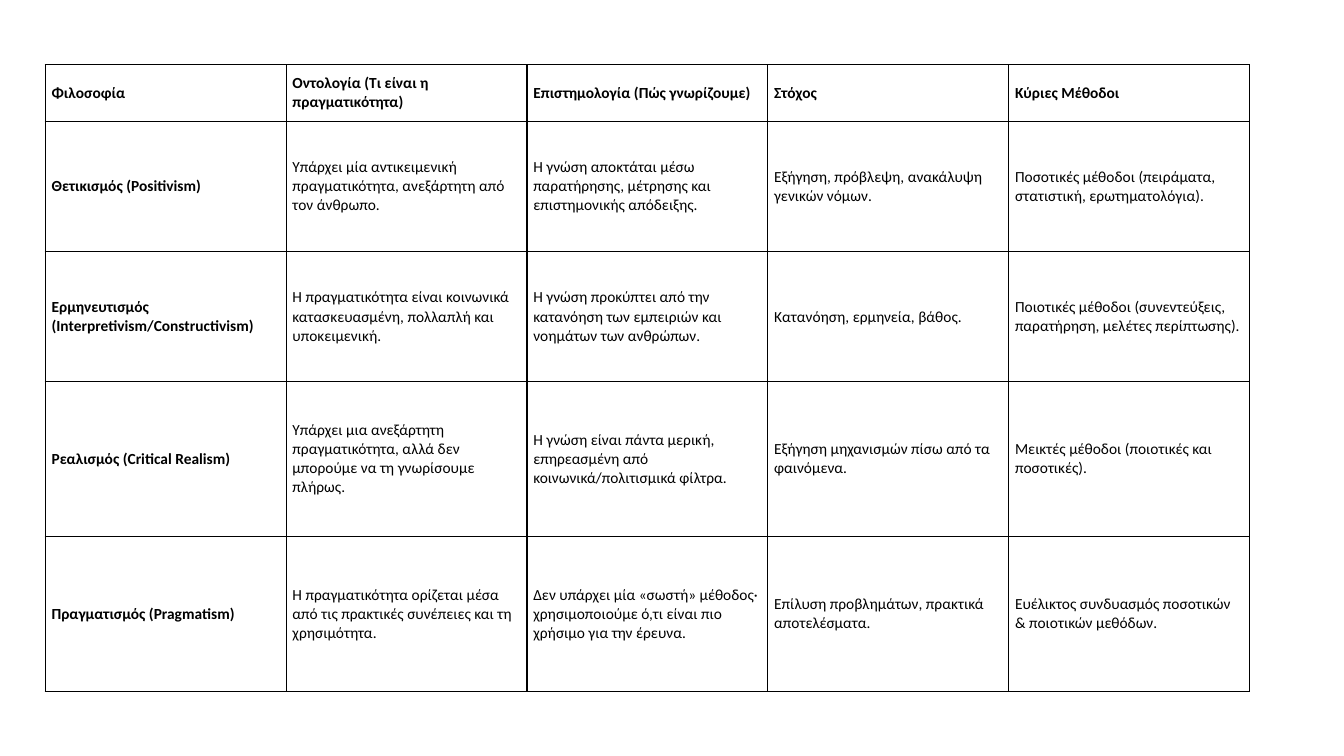
from dataclasses import dataclass
from lxml.etree import SubElement
from pptx import Presentation
from pptx.dml.color import RGBColor
from pptx.enum.text import MSO_ANCHOR
from pptx.oxml.ns import qn
from pptx.util import Cm, Pt


@dataclass
class Theme:
    ink: str = "000000"
    paper: str = "FFFFFF"
    font: str = "Calibri"
    size: int = 11
    rule: int = 1


theme = Theme()


def border(cell):
    props = cell._tc.get_or_add_tcPr()
    for side in ("lnL", "lnR", "lnT", "lnB"):
        line = SubElement(props, qn(f"a:{side}"), w=str(Pt(theme.rule)))
        fill = SubElement(line, qn("a:solidFill"))
        SubElement(fill, qn("a:srgbClr"), val=theme.ink)


rows = [
    ("Φιλοσοφία", "Οντολογία (Τι είναι η πραγματικότητα)",
     "Επιστημολογία (Πώς γνωρίζουμε)", "Στόχος", "Κύριες Μέθοδοι"),
    ("Θετικισμός (Positivism)",
     "Υπάρχει μία αντικειμενική πραγματικότητα, ανεξάρτητη από τον άνθρωπο.",
     "Η γνώση αποκτάται μέσω παρατήρησης, μέτρησης και επιστημονικής απόδειξης.",
     "Εξήγηση, πρόβλεψη, ανακάλυψη γενικών νόμων.",
     "Ποσοτικές μέθοδοι (πειράματα, στατιστική, ερωτηματολόγια)."),
    ("Ερμηνευτισμός (Interpretivism/Constructivism)",
     "Η πραγματικότητα είναι κοινωνικά κατασκευασμένη, πολλαπλή και υποκειμενική.",
     "Η γνώση προκύπτει από την κατανόηση των εμπειριών και νοημάτων των ανθρώπων.",
     "Κατανόηση, ερμηνεία, βάθος.",
     "Ποιοτικές μέθοδοι (συνεντεύξεις, παρατήρηση, μελέτες περίπτωσης)."),
    ("Ρεαλισμός (Critical Realism)",
     "Υπάρχει μια ανεξάρτητη πραγματικότητα, αλλά δεν μπορούμε να τη γνωρίσουμε πλήρως.",
     "Η γνώση είναι πάντα μερική, επηρεασμένη από κοινωνικά/πολιτισμικά φίλτρα.",
     "Εξήγηση μηχανισμών πίσω από τα φαινόμενα.",
     "Μεικτές μέθοδοι (ποιοτικές και ποσοτικές)."),
    ("Πραγματισμός (Pragmatism)",
     "Η πραγματικότητα ορίζεται μέσα από τις πρακτικές συνέπειες και τη χρησιμότητα.",
     "Δεν υπάρχει μία «σωστή» μέθοδος· χρησιμοποιούμε ό,τι είναι πιο χρήσιμο για την έρευνα.",
     "Επίλυση προβλημάτων, πρακτικά αποτελέσματα.",
     "Ευέλικτος συνδυασμός ποσοτικών & ποιοτικών μεθόδων."),
]
heights = [1.43, 3.28, 3.28, 3.9, 3.9]
width = 6.07
count = len(rows[0])

deck = Presentation()
deck.slide_width, deck.slide_height = Cm(33.87), Cm(19.05)
slide = deck.slides.add_slide(deck.slide_layouts[6])

frame = slide.shapes.add_table(len(rows), count, Cm(1.14), Cm(1.63),
                               Cm(width * count), Cm(sum(heights)))
table = frame.table
table.horz_banding = False
for column in table.columns:
    column.width = Cm(width)

for r, (texts, height) in enumerate(zip(rows, heights)):
    table.rows[r].height = Cm(height)
    for c, text in enumerate(texts):
        cell = table.cell(r, c)
        border(cell)
        cell.fill.solid()
        cell.fill.fore_color.rgb = RGBColor.from_string(theme.paper)
        cell.vertical_anchor = MSO_ANCHOR.MIDDLE
        cell.margin_left = cell.margin_right = Cm(0.16)
        cell.margin_top = cell.margin_bottom = Cm(0.08)
        run = cell.text_frame.paragraphs[0].add_run()
        run.text = text
        run.font.name = theme.font
        run.font.size = Pt(theme.size)
        run.font.bold = r == 0 or c == 0
        run.font.color.rgb = RGBColor.from_string(theme.ink)

deck.save("out.pptx")
